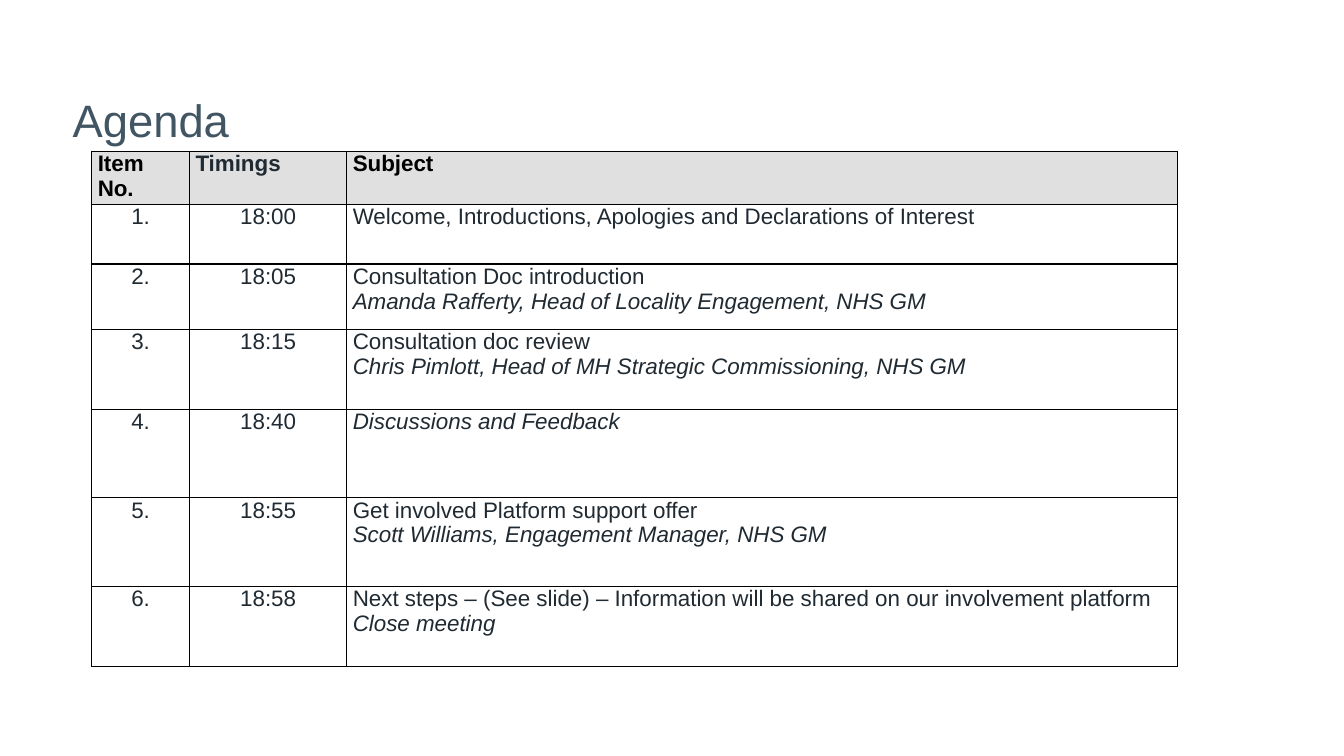
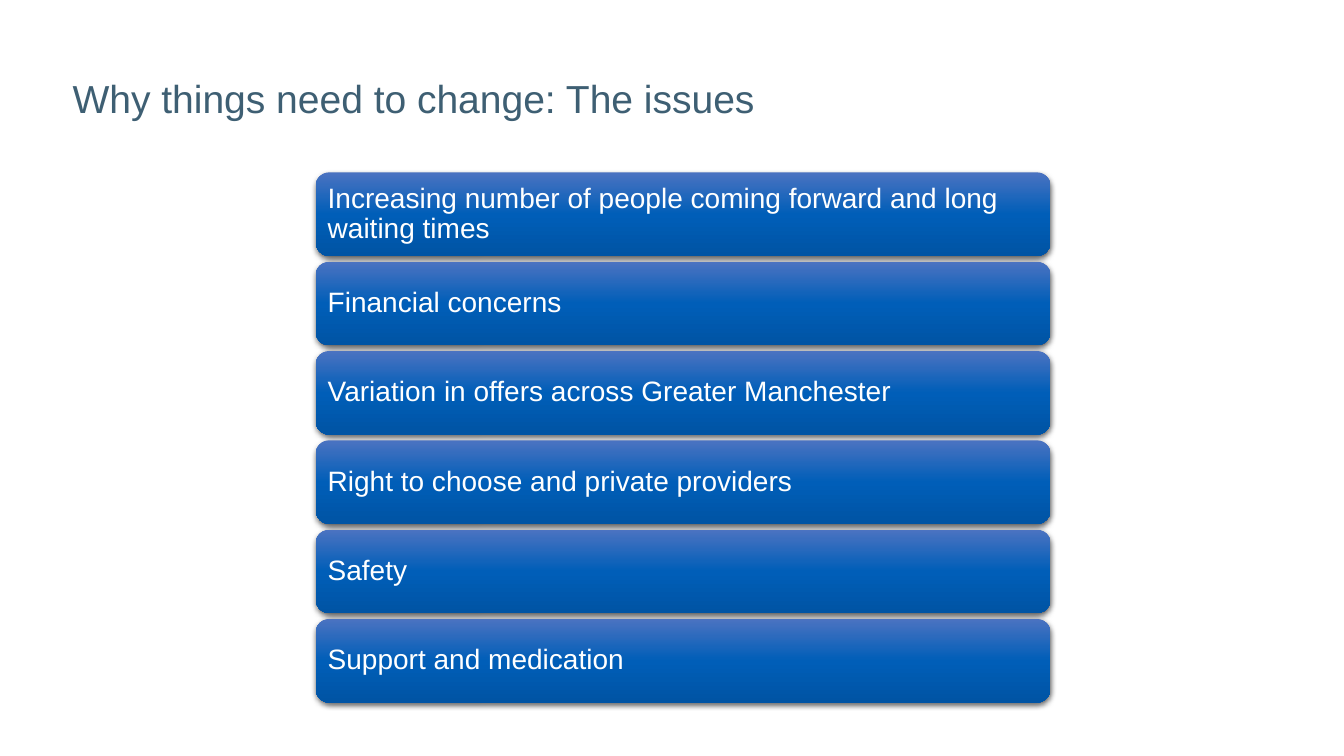
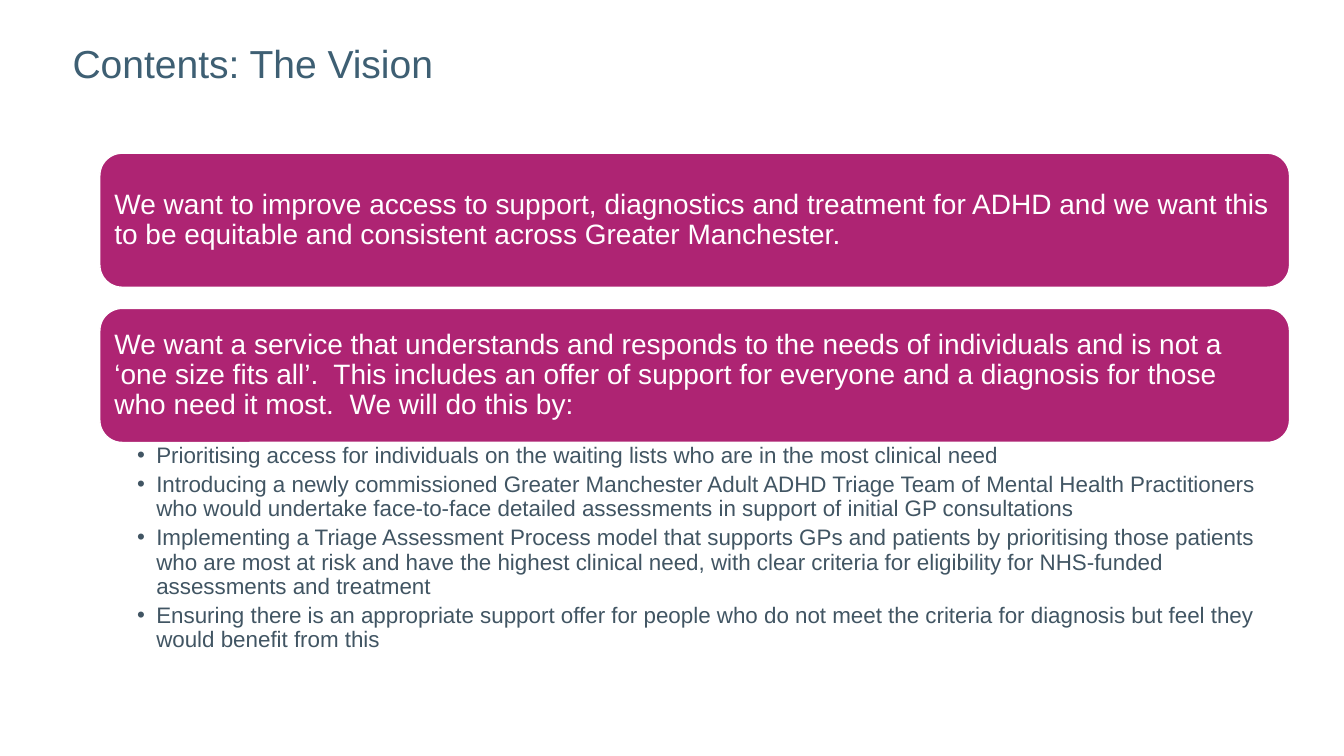
import copy

import pptx
import pptx.dml.color
import pptx.enum.dml
import pptx.enum.shapes
import pptx.enum.text
import pptx.oxml
import pptx.oxml.ns
import pptx.util
from lxml import etree

Inches = pptx.util.Inches
Pt = pptx.util.Pt
qn = pptx.oxml.ns.qn

FONT = "Arial"
BLACK = "000000"
WHITE = "FFFFFF"
SLATE = "415563"
TEAL = "3E5F73"
INK = "202A32"
HEADER_GREY = "E0E0E0"
MAGENTA = "AE2473"
BLUE_GRADIENT = [(0, "4B73C1"), (0.5, "005EB8"), (1, "0054A4")]

AGENDA_HEADER = [("Item No.", BLACK), ("Timings", INK), ("Subject", BLACK)]
AGENDA_ITEMS = [
    ("18:00", "Welcome, Introductions, Apologies and Declarations of Interest", ""),
    ("18:05", "Consultation Doc introduction", "Amanda Rafferty, Head of Locality Engagement, NHS GM"),
    ("18:15", "Consultation doc review", "Chris Pimlott, Head of MH Strategic Commissioning, NHS GM"),
    ("18:40", "", "Discussions and Feedback"),
    ("18:55", "Get involved Platform support offer", "Scott Williams, Engagement Manager, NHS GM"),
    ("18:58", "Next steps – (See slide) – Information will be shared on our involvement platform", "Close meeting"),
]
AGENDA_COLUMNS = [0.97, 1.56, 8.24]
AGENDA_ROWS = [0.53, 0.59, 0.65, 0.79, 0.88, 0.88, 0.79]

ISSUES = [
    "Increasing number of people coming forward and long waiting times",
    "Financial concerns",
    "Variation in offers across Greater Manchester",
    "Right to choose and private providers",
    "Safety",
    "Support and medication",
]
VISION = [
    "We want to improve access to support, diagnostics and treatment for ADHD and we want this "
    "to be equitable and consistent across Greater Manchester.",
    "We want a service that understands and responds to the needs of individuals and is not a "
    "‘one size fits all’.  This includes an offer of support for everyone and a diagnosis for those "
    "who need it most.  We will do this by:",
]
ACTIONS = [
    "Prioritising access for individuals on the waiting lists who are in the most clinical need",
    "Introducing a newly commissioned Greater Manchester Adult ADHD Triage Team of Mental Health Practitioners "
    "who would undertake face-to-face detailed assessments in support of initial GP consultations",
    "Implementing a Triage Assessment Process model that supports GPs and patients by prioritising those patients "
    "who are most at risk and have the highest clinical need, with clear criteria for eligibility for NHS-funded "
    "assessments and treatment",
    "Ensuring there is an appropriate support offer for people who do not meet the criteria for diagnosis "
    "but feel they would benefit from this",
]


def rgb(value):
    return pptx.dml.color.RGBColor.from_string(value)


def format_paragraph(paragraph, size, color, bold=False, italic=False, spacing=None):
    paragraph.line_spacing = spacing
    for run in paragraph.runs:
        run.font.name = FONT
        run.font.size = Pt(size)
        run.font.bold = bold
        run.font.italic = italic
        run.font.color.rgb = rgb(color)


def set_margins(target, left, top, right, bottom):
    target.margin_left, target.margin_top = Inches(left), Inches(top)
    target.margin_right, target.margin_bottom = Inches(right), Inches(bottom)


def add_titled_slide(presentation, text, top, size, color):
    slide = presentation.slides.add_slide(presentation.slide_layouts[5])
    title = slide.shapes.title
    title.left, title.top = Inches(0.62), Inches(top)
    title.width, title.height = Inches(9.44), Inches(0.57)
    frame = title.text_frame
    frame.text = text
    frame.word_wrap = True
    frame.auto_size = pptx.enum.text.MSO_AUTO_SIZE.NONE
    frame.vertical_anchor = pptx.enum.text.MSO_ANCHOR.MIDDLE
    paragraph = frame.paragraphs[0]
    paragraph.alignment = pptx.enum.text.PP_ALIGN.LEFT
    format_paragraph(paragraph, size, color, spacing=0.9)
    return slide


def add_borders(cell):
    properties = cell._tc.get_or_add_tcPr()
    for index, side in enumerate(("a:lnL", "a:lnR", "a:lnT", "a:lnB")):
        line = etree.Element(qn(side), w=str(Pt(1)))
        fill = etree.SubElement(line, qn("a:solidFill"))
        etree.SubElement(fill, qn("a:srgbClr"), val=BLACK)
        properties.insert(index, line)


def fill_cell(cell, lines, centered=False, background=None):
    set_margins(cell, 0.06, 0, 0.06, 0)
    if background:
        cell.fill.solid()
        cell.fill.fore_color.rgb = rgb(background)
    else:
        cell.fill.background()
    add_borders(cell)
    frame = cell.text_frame
    frame.text = "\n".join(text for text, style in lines)
    for paragraph, (text, style) in zip(frame.paragraphs, lines):
        if centered:
            paragraph.alignment = pptx.enum.text.PP_ALIGN.CENTER
        format_paragraph(paragraph, 16, **style)


def add_agenda_table(slide):
    table = slide.shapes.add_table(
        len(AGENDA_ROWS), len(AGENDA_COLUMNS), Inches(0.91), Inches(1.5),
        Inches(sum(AGENDA_COLUMNS)), Inches(sum(AGENDA_ROWS))).table
    table.first_row = table.horz_banding = False
    for column, width in zip(table.columns, AGENDA_COLUMNS):
        column.width = Inches(width)
    for row, height in zip(table.rows, AGENDA_ROWS):
        row.height = Inches(height)
    for index, (text, color) in enumerate(AGENDA_HEADER):
        fill_cell(table.cell(0, index), [(text, {"color": color, "bold": True})], background=HEADER_GREY)
    plain = {"color": INK}
    italic = {"color": INK, "italic": True}
    for number, (time, subject, detail) in enumerate(AGENDA_ITEMS, 1):
        fill_cell(table.cell(number, 0), [(f"{number}.", plain)], centered=True)
        fill_cell(table.cell(number, 1), [(time, plain)], centered=True)
        lines = [line for line in ((subject, plain), (detail, italic)) if line[0]]
        fill_cell(table.cell(number, 2), lines)


def add_box(slide, text, left, top, width, height):
    shape = slide.shapes.add_shape(
        pptx.enum.shapes.MSO_SHAPE.ROUNDED_RECTANGLE,
        Inches(left), Inches(top), Inches(width), Inches(height))
    shape.shadow.inherit = False
    frame = shape.text_frame
    frame.word_wrap = True
    frame.vertical_anchor = pptx.enum.text.MSO_ANCHOR.MIDDLE
    set_margins(frame, 0.08, 0.08, 0.08, 0.08)
    frame.text = text
    frame.paragraphs[0].alignment = pptx.enum.text.PP_ALIGN.LEFT
    format_paragraph(frame.paragraphs[0], 20, WHITE, spacing=0.9)
    return shape


def add_gradient(shape):
    shape.fill.gradient()
    shape.fill.gradient_angle = 270
    stop_list = shape._element.spPr.find(".//" + qn("a:gsLst"))
    stop_list.append(copy.deepcopy(stop_list[0]))
    for stop, (position, color) in zip(shape.fill.gradient_stops, BLUE_GRADIENT):
        stop.position = position
        stop.color.rgb = rgb(color)


def add_shadow(shape):
    effects = shape._element.spPr.find(qn("a:effectLst"))
    shadow = etree.SubElement(
        effects, qn("a:outerShdw"), blurRad=str(Pt(4.5)), dist=str(Pt(1.5)),
        dir="5400000", algn="ctr", rotWithShape="0")
    color = etree.SubElement(shadow, qn("a:srgbClr"), val=BLACK)
    etree.SubElement(color, qn("a:alpha"), val="63000")


def add_issue_boxes(slide):
    height, gap = 0.83, 0.056
    for index, issue in enumerate(ISSUES):
        box = add_box(slide, issue, 3.13, 1.71 + index * (height + gap), 7.29, height)
        add_gradient(box)
        box.line.fill.background()
        add_shadow(box)


def add_vision_boxes(slide):
    height, gap = 1.33, 0.21
    for index, statement in enumerate(VISION):
        box = add_box(slide, statement, 0.99, 1.52 + index * (height + gap), 11.8, height)
        box.fill.solid()
        box.fill.fore_color.rgb = rgb(MAGENTA)
        box.line.color.rgb = rgb(WHITE)
        box.line.width = Pt(1)


def add_actions(slide):
    frame = slide.shapes.add_textbox(Inches(0.99), Inches(4.39), Inches(11.8), Inches(2.06)).text_frame
    frame.word_wrap = True
    set_margins(frame, 0.37, 0.02, 0.12, 0.02)
    frame.text = "\n".join(ACTIONS)
    for paragraph in frame.paragraphs:
        properties = paragraph._p.get_or_add_pPr()
        properties.set("marL", str(Inches(0.19)))
        properties.set("indent", str(-Inches(0.19)))
        etree.SubElement(properties, qn("a:buFont"), typeface=FONT)
        etree.SubElement(properties, qn("a:buChar"), char="•")
        paragraph.space_after = Pt(3.4)
        format_paragraph(paragraph, 16, SLATE, spacing=0.9)


def main():
    presentation = pptx.Presentation()
    presentation.slide_width, presentation.slide_height = Inches(13.33), Inches(7.5)

    agenda = add_titled_slide(presentation, "Agenda", 0.93, 32.4, SLATE)
    add_agenda_table(agenda)

    issues = add_titled_slide(presentation, "Why things need to change: The issues", 0.72, 27.9, TEAL)
    add_issue_boxes(issues)

    vision = add_titled_slide(presentation, "Contents: The Vision", 0.37, 27.9, TEAL)
    add_vision_boxes(vision)
    add_actions(vision)

    presentation.save("out.pptx")


if __name__ == "__main__":
    main()
